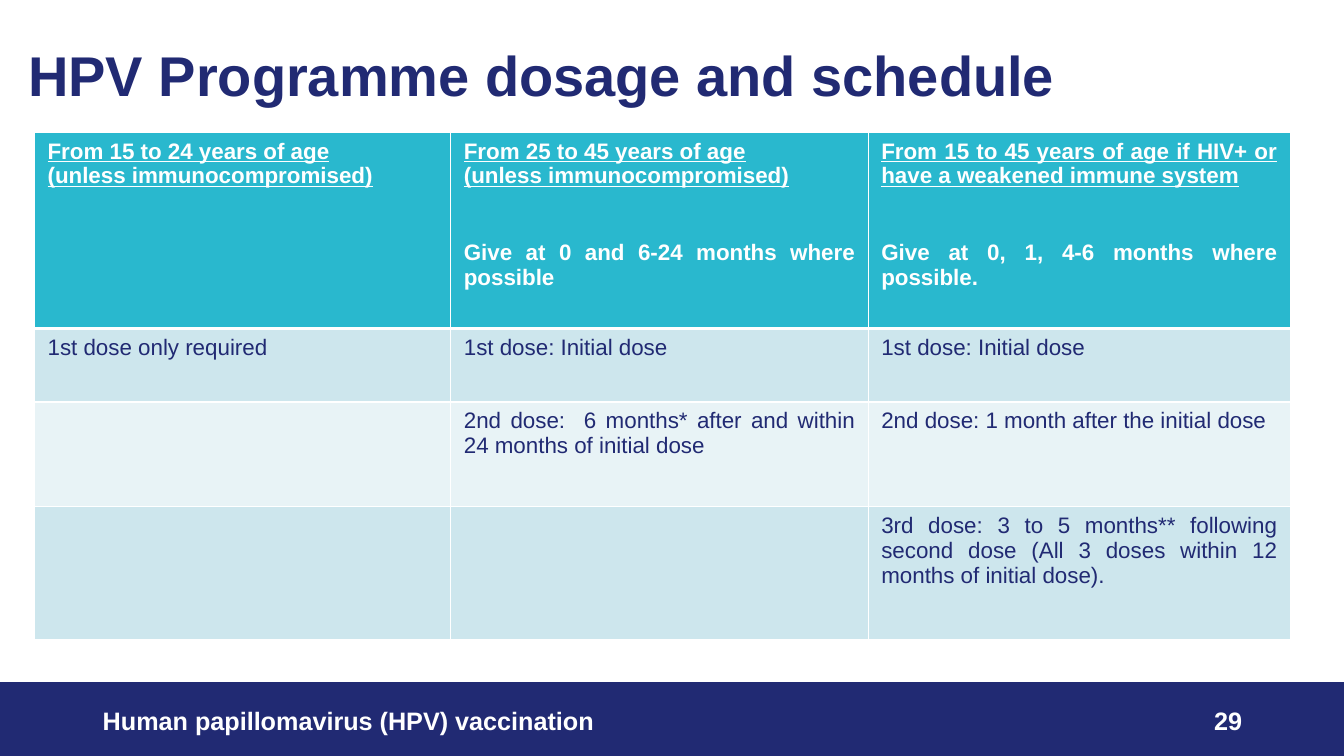
from dataclasses import dataclass

from lxml import etree
from pptx import Presentation
from pptx.dml.color import RGBColor
from pptx.enum.shapes import MSO_SHAPE
from pptx.enum.text import MSO_ANCHOR, MSO_AUTO_SIZE, PP_ALIGN
from pptx.oxml.ns import qn
from pptx.util import Cm, Pt

RECT = MSO_SHAPE.RECTANGLE
TOP, MIDDLE = MSO_ANCHOR.TOP, MSO_ANCHOR.MIDDLE
LEFT, RIGHT, JUSTIFY = PP_ALIGN.LEFT, PP_ALIGN.RIGHT, PP_ALIGN.JUSTIFY
NO_FIT = MSO_AUTO_SIZE.NONE

TITLE = "HPV Programme dosage and schedule"
HEADS = [
    (["From 15 to 24 years of age", "(unless immunocompromised)"], None),
    (["From 25 to 45 years of age", "(unless immunocompromised)"],
     "Give at 0 and 6-24 months where possible"),
    (["From 15 to 45 years of age if HIV+ or have a weakened immune system"],
     "Give at 0, 1, 4-6 months where possible."),
]
DOSES = [
    ["1st dose only required", "1st dose: Initial dose", "1st dose: Initial dose"],
    ["", "2nd dose:  6 months* after and within 24 months of initial dose",
     "2nd dose: 1 month after the initial dose"],
    ["", "", "3rd dose: 3 to 5 months** following second dose "
             "(All 3 doses within 12 months of initial dose)."],
]
FOOTER = [
    ("Human papillomavirus (HPV) vaccination", 2.34, 20.32, LEFT),
    ("29", 23.93, 7.62, RIGHT),
]
WIDTHS = [10.49, 10.52, 10.64]
HEIGHTS = [4.95, 1.85, 2.64, 3.35]


@dataclass(frozen=True)
class Theme:
    font: str = "Arial"
    navy: str = "212A73"
    teal: str = "29B8CE"
    white: str = "FFFFFF"
    bands: tuple = ("CDE6ED", "E8F3F6")
    title: int = 40
    body: int = 16
    foot: int = 18
    gap: float = 36.8
    thin: int = 1
    thick: int = 3


THEME = Theme()


def paint(fill, shade):
    fill.solid()
    fill.fore_color.rgb = RGBColor.from_string(shade)


def write(frame, text, size=THEME.body, shade=THEME.navy, bold=False,
          under=False, align=LEFT, before=0, pitch=None, more=False):
    para = frame.add_paragraph() if more else frame.paragraphs[0]
    para.alignment = align
    para.space_before = Pt(before)
    if pitch:
        para.line_spacing = pitch
    run = para.add_run()
    run.text = text
    font = run.font
    font.name, font.size = THEME.font, Pt(size)
    font.bold, font.underline = bold, under
    font.color.rgb = RGBColor.from_string(shade)


def style(cell, shade, row):
    cell.margin_left = cell.margin_right = Cm(0.33)
    cell.margin_top = cell.margin_bottom = Cm(0.17)
    paint(cell.fill, shade)
    props = cell.fill._xPr
    edges = {"L": THEME.thin, "R": THEME.thin,
             "T": THEME.thick if row == 1 else THEME.thin,
             "B": THEME.thick if row == 0 else THEME.thin}
    for spot, (side, width) in enumerate(edges.items()):
        line = etree.Element(qn(f"a:ln{side}"), w=str(Pt(width)))
        fill = etree.SubElement(line, qn("a:solidFill"))
        etree.SubElement(fill, qn("a:srgbClr"), val=THEME.white)
        props.insert(spot, line)


def add_title(slide):
    title = slide.shapes.title
    title.left, title.top = Cm(0.46), Cm(1.09)
    title.width, title.height = Cm(33.55), Cm(2.57)
    frame = title.text_frame
    frame.word_wrap, frame.auto_size = True, NO_FIT
    frame.vertical_anchor = TOP
    write(frame, TITLE, size=THEME.title, bold=True, pitch=0.9)


def add_grid(slide):
    grid = slide.shapes.add_table(
        len(HEIGHTS), len(WIDTHS), Cm(0.87), Cm(3.33),
        Cm(sum(WIDTHS)), Cm(sum(HEIGHTS))).table
    for col, width in zip(grid.columns, WIDTHS):
        col.width = Cm(width)
    for row, height in zip(grid.rows, HEIGHTS):
        row.height = Cm(height)
    for col, (lines, note) in enumerate(HEADS):
        cell = grid.cell(0, col)
        style(cell, THEME.teal, 0)
        look = dict(shade=THEME.white, bold=True, align=JUSTIFY)
        for rank, line in enumerate(lines):
            write(cell.text_frame, line, under=True, more=rank > 0, **look)
        if note:
            write(cell.text_frame, note, before=THEME.gap, more=True, **look)
    for row, doses in enumerate(DOSES, 1):
        for col, dose in enumerate(doses):
            cell = grid.cell(row, col)
            style(cell, THEME.bands[(row - 1) % 2], row)
            if dose:
                write(cell.text_frame, dose, align=JUSTIFY)


def add_foot(slide):
    bar = slide.shapes.add_shape(RECT, 0, Cm(17.2), Cm(33.87), Cm(1.85))
    bar.shadow.inherit = False
    paint(bar.fill, THEME.navy)
    paint(bar.line.fill, THEME.navy)
    bar.line.width = Pt(THEME.thin)
    for text, left, width, align in FOOTER:
        box = slide.shapes.add_textbox(Cm(left), Cm(17.65), Cm(width), Cm(1.02))
        frame = box.text_frame
        frame.word_wrap, frame.vertical_anchor = True, MIDDLE
        write(frame, text, size=THEME.foot, shade=THEME.white,
              bold=True, align=align)


def main():
    deck = Presentation()
    deck.slide_width, deck.slide_height = Cm(33.87), Cm(19.05)
    slide = deck.slides.add_slide(deck.slide_layouts[5])
    add_title(slide)
    add_grid(slide)
    add_foot(slide)
    deck.save("out.pptx")


if __name__ == "__main__":
    main()
